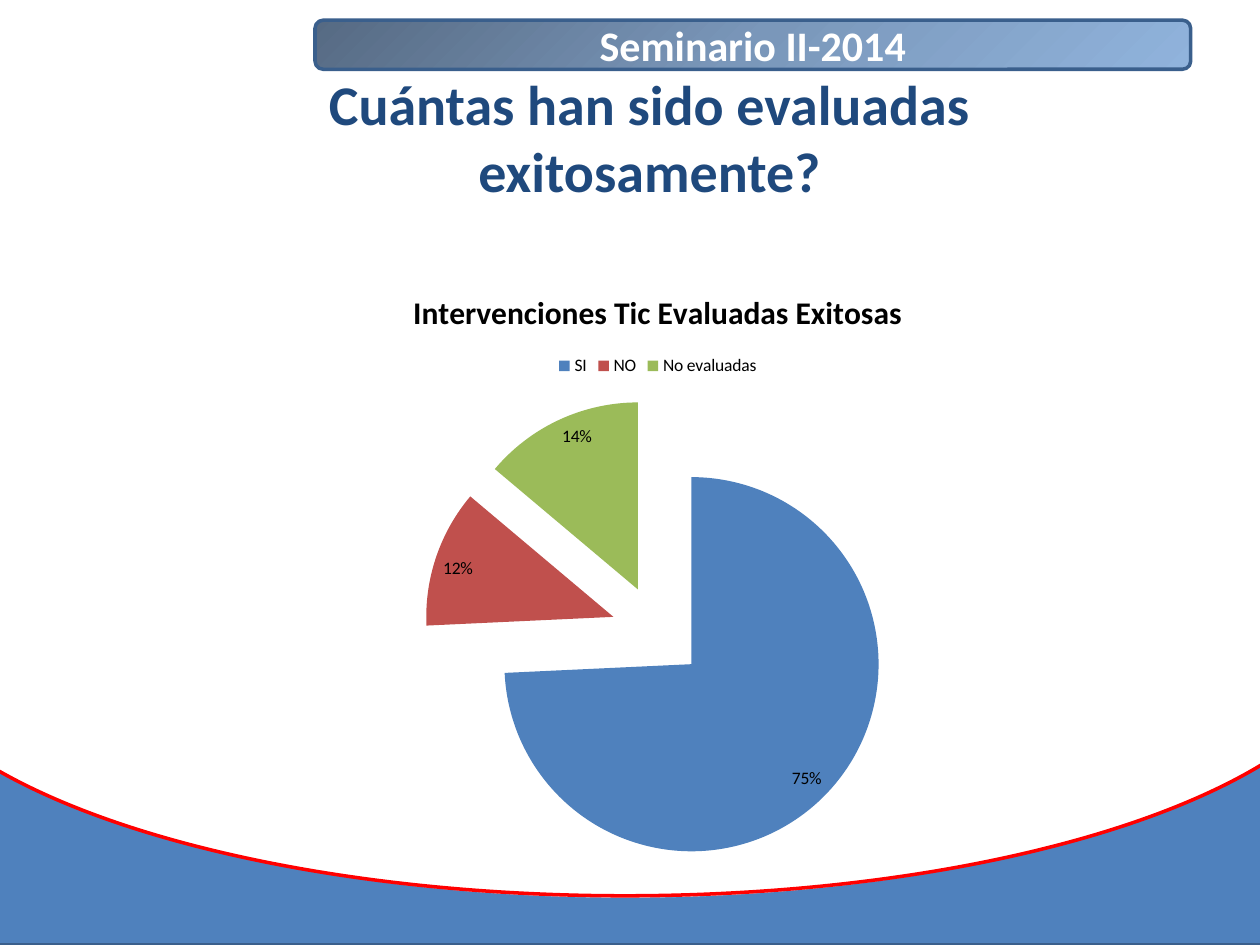
from lxml import etree
from copy import deepcopy
from pptx import Presentation
from pptx.chart.data import CategoryChartData
from pptx.dml.color import RGBColor
from pptx.enum import chart as charts, shapes, text
from pptx.oxml.ns import qn
from pptx.util import Inches, Pt

COLORS = {
    "blue": "4F81BD", "outline": "3A5F8C", "white": "FFFFFF", "red": "FF0000",
    "black": "000000", "title": "1F497D", "brick": "C0504D", "green": "9BBB59",
    "dark": "566A83", "middle": "7A97BA", "light": "90B3DC",
}
FONT = "Calibri"


def rgb(name):
    return RGBColor.from_string(COLORS[name])


def format_font(font, size, color="black", bold=False):
    font.name, font.size, font.bold = FONT, Pt(size), bold
    font.color.rgb = rgb(color)


def write(frame, words, size, color, bold=True, bottom=0.05):
    frame.word_wrap = True
    frame.vertical_anchor = text.MSO_ANCHOR.MIDDLE
    frame.margin_bottom = Inches(bottom)
    para = frame.paragraphs[0]
    para.alignment = text.PP_ALIGN.CENTER
    span = para.add_run()
    span.text = words
    format_font(span.font, size, color, bold)


class SlideBuilder:
    def __init__(self, page):
        self.page = page

    def shape(self, kind, place, line, fill=None):
        shape = self.page.shapes.add_shape(kind, *map(Inches, place))
        shape.shadow.inherit = False
        if fill:
            shape.fill.solid()
            shape.fill.fore_color.rgb = rgb(fill)
        else:
            shape.fill.background()
        shape.line.color.rgb = rgb(line)
        shape.line.width = Pt(2)
        return shape

    def banner(self, words, place, stops):
        shape = self.shape(shapes.MSO_SHAPE.ROUNDED_RECTANGLE, place, "outline")
        shape.fill.gradient()
        shape.fill.gradient_angle = 315
        first = shape._element.spPr.find(".//" + qn("a:gs"))
        middle = deepcopy(first)
        middle.set("pos", "50000")
        first.addnext(middle)
        for stop, color in zip(shape.fill.gradient_stops, stops):
            stop.color.rgb = rgb(color)
        write(shape.text_frame, words, 24, "white")

    def heading(self, words, place):
        box = self.page.shapes.add_textbox(*map(Inches, place))
        write(box.text_frame, words, 32, "title", bottom=0.53)

    def pie(self, title, shares, place):
        data = CategoryChartData()
        data.categories = [name for name, _, _ in shares]
        data.add_series("Series 1", [value for _, value, _ in shares])
        chart = self.page.shapes.add_chart(
            charts.XL_CHART_TYPE.PIE, *map(Inches, place), data).chart
        format_font(chart.font, 10)
        chart.has_title = True
        chart.chart_title.text_frame.text = title
        span = chart.chart_title.text_frame.paragraphs[0].runs[0]
        format_font(span.font, 18, bold=True)
        chart.has_legend = True
        chart.legend.position = charts.XL_LEGEND_POSITION.TOP
        chart.legend.include_in_layout = False
        plot = chart.plots[0]
        plot.vary_by_categories = True
        series = plot.series[0]
        for index, (_, _, color) in enumerate(shares):
            fill = series.points[index].format.fill
            fill.solid()
            fill.fore_color.rgb = rgb(color)
        explosion = etree.Element(qn("c:explosion"), val="25")
        series._element.find(qn("c:dPt")).addprevious(explosion)
        plot.has_data_labels = True
        labels = plot.data_labels
        labels.show_value = True
        labels.number_format = '0"%"'
        labels.number_format_is_linked = False
        labels.position = charts.XL_LABEL_POSITION.INSIDE_END
        format_font(labels.font, 10)


def main():
    deck = Presentation()
    deck.slide_width, deck.slide_height = Inches(10), Inches(7.5)
    slide = SlideBuilder(deck.slides.add_slide(deck.slide_layouts[6]))
    rectangle, oval = shapes.MSO_SHAPE.RECTANGLE, shapes.MSO_SHAPE.OVAL
    slide.shape(rectangle, (-0.94, 3.83, 12.11, 3.67), "outline", "blue")
    slide.shape(oval, (-1.09, 2.42, 12.11, 4.69), "white", "white")
    slide.shape(oval, (-0.94, 2.81, 11.8, 4.3), "red")
    slide.shape(rectangle, (-0.94, 0, 12.11, 5.86), "white", "white")
    slide.banner("Seminario II-2014", (2.5, 0.16, 6.95, 0.39),
                 ("dark", "middle", "light"))
    slide.heading("Cuántas han sido evaluadas exitosamente?",
                  (1.17, 0.7, 7.97, 1.25))
    slide.pie("Intervenciones Tic Evaluadas Exitosas",
              [("SI", 75, "blue"), ("NO", 12, "brick"),
               ("No evaluadas", 14, "green")],
              (0.94, 2.11, 8.56, 4.9))
    deck.save("out.pptx")


if __name__ == "__main__":
    main()
